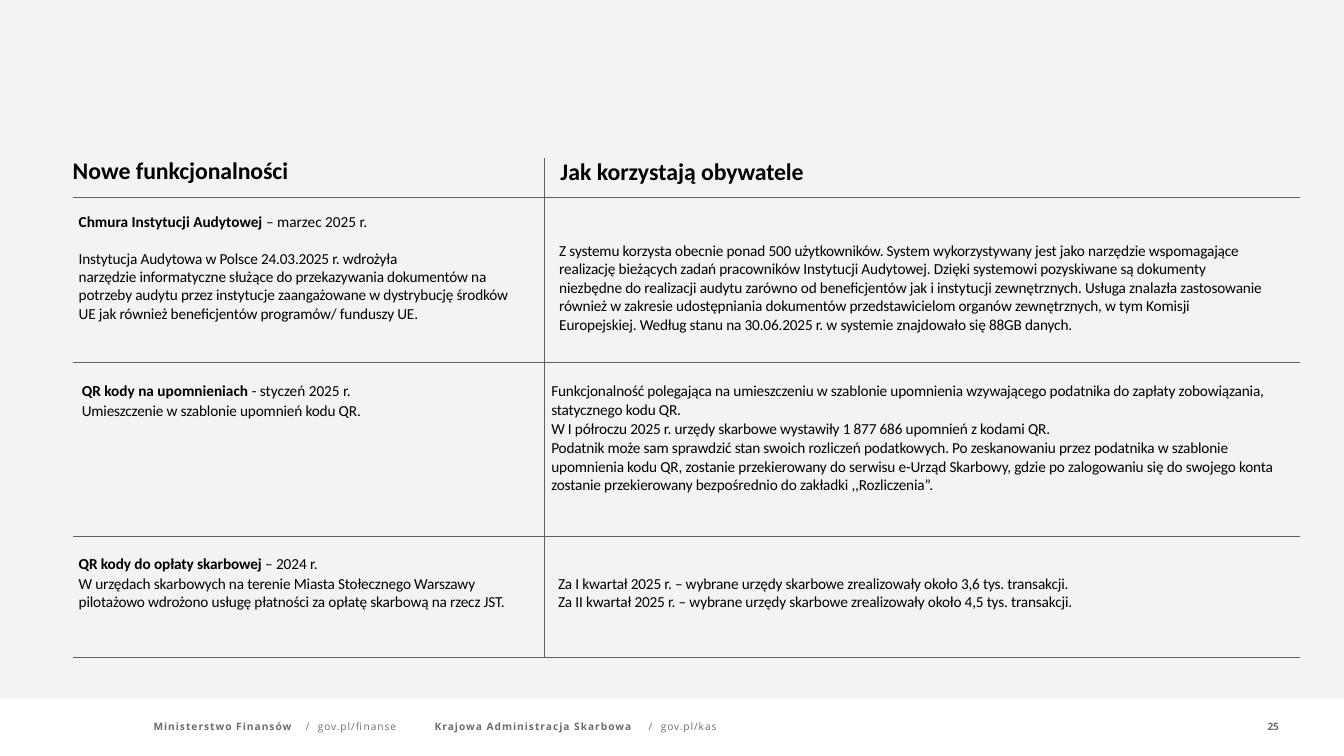
from lxml.etree import SubElement
from pptx import Presentation
from pptx.dml.color import RGBColor
from pptx.enum.shapes import MSO_CONNECTOR, MSO_SHAPE
from pptx.enum.text import MSO_ANCHOR, MSO_AUTO_SIZE, PP_ALIGN
from pptx.oxml.ns import qn
from pptx.util import Cm, Pt

BLACK, GREY, RULE, BAND = "000000", "696D6E", "5D6162", "F3F3F2"
TABLE_LEFT, TABLE_RIGHT, DIVIDER_X = 3.02, 54.03, 22.63
DIVIDER_TOP, ROW_LINES = 6.58, (8.18, 15.06, 22.28, 27.33)
FOOTER_TOP, FOOTER_HEIGHT = 29.87, 0.66

HEADING = {"size": 28, "font": "Calibri", "color": BLACK, "insets": (0, 0.05, 0, 0),
           "paragraph": {"space_before": Pt(1.1), "alignment": PP_ALIGN.LEFT}}
CELL = {"size": 18, "font": "Calibri", "color": BLACK, "insets": (0.25, 0.13, 0.25, 0.13),
        "paragraph": {"line_spacing": Pt(21.8), "space_before": Pt(1)}}
FLUSH_CELL = {**CELL, "insets": (0, 0.03, 0, 0)}
PLAIN_CELL = {**CELL, "paragraph": {}}
FOOTER = {"size": 12, "font": "Open Sans", "color": GREY, "insets": (0, 0.08, 0, 0),
          "paragraph": {"space_before": Pt(2.2)}}


def rgb(value):
    return RGBColor.from_string(value)


def set_all(target, values):
    for name, value in values.items():
        setattr(target, name, value)


def regular(text, spacing=-0.2):
    return text, False, spacing


def strong(text, spacing=0):
    return text, True, spacing


def write(shape, paragraphs, style):
    frame = shape.text_frame
    left, top, right, bottom = map(Cm, style["insets"])
    set_all(frame, {"word_wrap": True, "auto_size": MSO_AUTO_SIZE.NONE,
                    "vertical_anchor": MSO_ANCHOR.TOP, "margin_left": left,
                    "margin_top": top, "margin_right": right, "margin_bottom": bottom})
    for index, runs in enumerate(paragraphs):
        paragraph = frame.add_paragraph() if index else frame.paragraphs[0]
        set_all(paragraph, style["paragraph"])
        for text, bold, spacing in runs:
            run = paragraph.add_run()
            run.text = text
            set_all(run.font, {"size": Pt(style["size"]), "name": style["font"], "bold": bold})
            run.font.color.rgb = rgb(style["color"])
            run.font._element.set("spc", str(round(spacing * 100)))
    return frame


def add_text(slide, box, paragraphs, style):
    return write(slide.shapes.add_textbox(*map(Cm, box)), paragraphs, style)


def add_title(slide, box, paragraphs, style):
    title = slide.shapes.title
    set_all(title, dict(zip(("left", "top", "width", "height"), map(Cm, box))))
    write(title, paragraphs, style)


def add_rule(slide, *ends):
    rule = slide.shapes.add_connector(MSO_CONNECTOR.STRAIGHT, *map(Cm, ends))
    rule.line.width = Pt(0.25)
    rule.line.color.rgb = rgb(RULE)
    SubElement(rule._element.spPr, qn("a:effectLst"))


def add_band(slide, width, height):
    band = slide.shapes.add_shape(MSO_SHAPE.RECTANGLE, 0, 0, width, height)
    band.shadow.inherit = False
    band.fill.solid()
    band.fill.fore_color.rgb = rgb(BAND)
    band.line.fill.background()
    tree = slide.shapes._spTree
    tree.remove(band._element)
    tree.insert(2, band._element)


def add_office(slide, left, width, office, address, tab_stops):
    runs = [strong(office + "\t", 1.2), regular("/\t", -0.5), regular(address, 1.1)]
    frame = add_text(slide, (left, FOOTER_TOP, width, FOOTER_HEIGHT), [runs], FOOTER)
    tabs = SubElement(frame.paragraphs[0]._p.get_or_add_pPr(), qn("a:tabLst"))
    for stop in tab_stops:
        SubElement(tabs, qn("a:tab"), pos=str(Cm(stop)), algn="l")


def add_cells(slide):
    audit = add_text(slide, (TABLE_LEFT, 8.69, 18.87, 5.82), [
        [strong("Chmura Instytucji Audytowej "), regular("– marzec 2025 r.", 0)],
        [regular("Instytucja Audytowa w Polsce 24.03.2025 r. wdrożyła")],
        [regular("narzędzie informatyczne służące do przekazywania dokumentów na potrzeby audytu "
                 "przez instytucje zaangażowane w dystrybucję środków UE jak również "
                 "beneficjentów programów/ funduszy UE.")],
    ], PLAIN_CELL)
    audit.paragraphs[1].space_before = Pt(21.8)
    add_text(slide, (22.99, 9.88, 29.97, 4.14), [
        [regular("Z systemu korzysta obecnie ponad 500 użytkowników. System wykorzystywany jest "
                 "jako narzędzie wspomagające realizację bieżących zadań pracowników Instytucji "
                 "Audytowej. Dzięki systemowi pozyskiwane są dokumenty niezbędne do realizacji "
                 "audytu zarówno od beneficjentów jak i instytucji zewnętrznych. Usługa znalazła "
                 "zastosowanie również w zakresie udostępniania dokumentów przedstawicielom "
                 "organów zewnętrznych, w tym Komisji Europejskiej. Według stanu na 30.06.2025 r. "
                 "w systemie znajdowało się 88GB danych.")],
    ], CELL)
    add_text(slide, (3.4, 15.82, 19.05, 1.6), [
        [strong("QR kody na upomnieniach "), regular("- styczeń 2025 r.", 0)],
        [regular("Umieszczenie w szablonie upomnień kodu QR.")],
    ], FLUSH_CELL)
    add_text(slide, (22.91, 15.82, 30.12, 4.78), [
        [regular("Funkcjonalność polegająca na umieszczeniu w szablonie upomnienia wzywającego "
                 "podatnika do zapłaty zobowiązania, statycznego kodu QR.")],
        [regular("W I półroczu 2025 r. urzędy skarbowe wystawiły 1 877 686 upomnień z kodami QR.")],
        [regular("Podatnik może sam sprawdzić stan swoich rozliczeń podatkowych. Po zeskanowaniu "
                 "przez podatnika w szablonie upomnienia kodu QR, zostanie przekierowany do "
                 "serwisu e-Urząd Skarbowy, gdzie po zalogowaniu się do swojego konta zostanie "
                 "przekierowany bezpośrednio do zakładki ,,Rozliczenia”.")],
    ], FLUSH_CELL)
    add_text(slide, (TABLE_LEFT, 22.91, 18.87, 2.59), [
        [strong("QR kody do opłaty skarbowej ", -0.1), regular("– 2024 r.", -0.1)],
        [regular("W urzędach skarbowych na terenie Miasta Stołecznego Warszawy pilotażowo "
                 "wdrożono usługę płatności za opłatę skarbową na rzecz JST.")],
    ], CELL)
    add_text(slide, (22.94, 23.72, 21.89, 2.57), [
        [regular(f"Za {quarter} kwartał 2025 r. – wybrane urzędy skarbowe zrealizowały "
                 f"około {count} tys. transakcji.")]
        for quarter, count in (("I", "3,6"), ("II", "4,5"))
    ], PLAIN_CELL)


def main():
    deck = Presentation()
    set_all(deck, {"slide_width": Cm(55.85), "slide_height": Cm(31.42)})
    slide = deck.slides.add_slide(deck.slide_layouts[5])
    add_band(slide, deck.slide_width, Cm(29.03))
    add_title(slide, (TABLE_LEFT, 6.43, 9.88, 1.24),
              [[strong("Nowe "), strong("funkcjonalności", -0.1)]], HEADING)
    add_text(slide, (23.29, 6.45, 10.82, 1.24),
             [[strong("Jak korzystają "), strong("obywatele", -0.1)]], HEADING)
    for y in ROW_LINES:
        add_rule(slide, TABLE_LEFT, y, TABLE_RIGHT, y)
    add_rule(slide, DIVIDER_X, DIVIDER_TOP, DIVIDER_X, ROW_LINES[-1])
    add_cells(slide)
    add_office(slide, 6.38, 10.36, "Ministerstwo Finansów", "gov.pl/finanse", (6.32, 6.83))
    add_office(slide, 18.06, 11.91, "Krajowa Administracja Skarbowa", "gov.pl/kas", (8.89, 9.4))
    add_text(slide, (52.68, FOOTER_TOP, 1.17, FOOTER_HEIGHT), [[strong("25", -0.5)]], FOOTER)
    deck.save("out.pptx")


if __name__ == "__main__":
    main()
